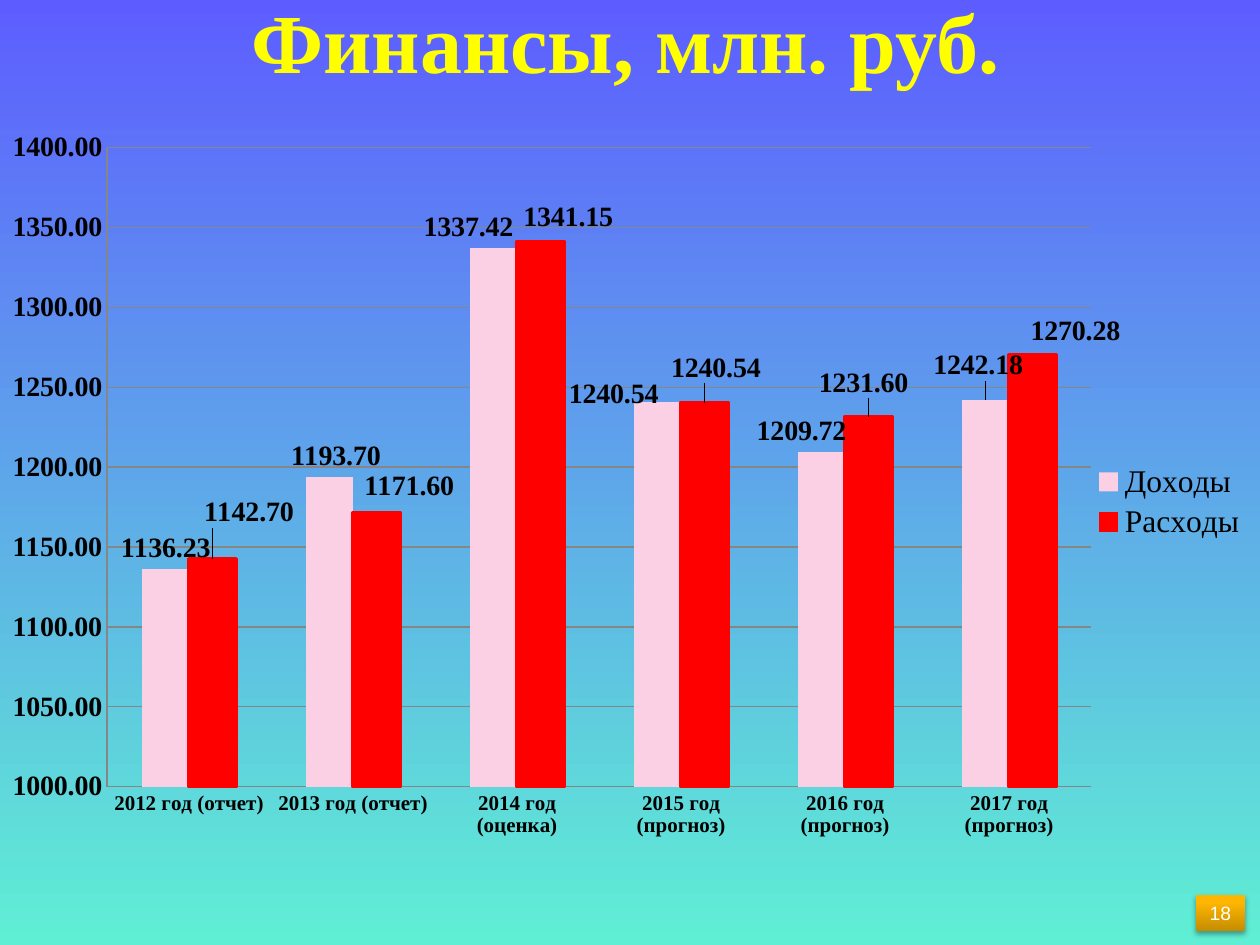
from copy import deepcopy
from lxml import etree
from pptx import Presentation
from pptx.chart.data import CategoryChartData
from pptx.dml.color import RGBColor
from pptx.enum.chart import XL_CHART_TYPE, XL_LABEL_POSITION, XL_LEGEND_POSITION, XL_TICK_MARK
from pptx.enum.shapes import MSO_SHAPE
from pptx.enum.text import MSO_ANCHOR, PP_ALIGN
from pptx.oxml import parse_xml
from pptx.oxml.ns import nsdecls, qn
from pptx.util import Inches, Pt

BLUE = RGBColor(0x5D, 0x5D, 0xFF)
TURQUOISE = RGBColor(0x5F, 0xEF, 0xD4)
YELLOW = RGBColor(0xFF, 0xFF, 0x00)
BLACK = RGBColor(0x00, 0x00, 0x00)
WHITE = RGBColor(0xFF, 0xFF, 0xFF)
GRAY = RGBColor(0x86, 0x86, 0x86)
PINK = RGBColor(0xFB, 0xD0, 0xE4)
RED = RGBColor(0xFF, 0x00, 0x00)
DARK_GOLD = RGBColor(0xC5, 0x8C, 0x00)
GOLD = RGBColor(0xFF, 0xB6, 0x01)
LIGHT_GOLD = RGBColor(0xFF, 0xB6, 0x02)
SERIF = "Times New Roman"
NUMBER_FORMAT = "0.00"


def style_font(font, size, name=SERIF, color=BLACK, bold=False):
    font.size = Pt(size)
    font.name = name
    font.bold = bold
    font.color.rgb = color


def make_layout(**values):
    layout = parse_xml(f"<c:layout {nsdecls('c')}><c:manualLayout/></c:layout>")
    for tag, value in values.items():
        etree.SubElement(layout[0], qn(f"c:{tag}")).set("val", str(value))
    return layout


presentation = Presentation()
presentation.slide_width = Inches(10)
presentation.slide_height = Inches(7.5)
slide = presentation.slides.add_slide(presentation.slide_layouts[6])

background = slide.background.fill
background.gradient()
background.gradient_angle = 270
for stop, color in zip(background.gradient_stops, (BLUE, TURQUOISE)):
    stop.color.rgb = color

title = slide.shapes.add_textbox(Inches(0.16), Inches(0), Inches(9.61), Inches(0.63))
title.text_frame.word_wrap = True
title.text_frame.vertical_anchor = MSO_ANCHOR.MIDDLE
title.text_frame.text = "Финансы, млн. руб."
paragraph = title.text_frame.paragraphs[0]
paragraph.alignment = PP_ALIGN.CENTER
style_font(paragraph.runs[0].font, 48, color=YELLOW, bold=True)

finances = CategoryChartData(number_format=NUMBER_FORMAT)
finances.categories = [
    "2012 год (отчет)", "2013 год (отчет)", "2014 год (оценка)",
    "2015 год (прогноз)", "2016 год (прогноз)", "2017 год (прогноз)",
]
finances.add_series("Доходы", (1136.23, 1193.70, 1337.42, 1240.54, 1209.72, 1242.18))
finances.add_series("Расходы", (1142.70, 1171.60, 1341.15, 1240.54, 1231.60, 1270.28))
chart = slide.shapes.add_chart(
    XL_CHART_TYPE.COLUMN_CLUSTERED, Inches(0), Inches(0.94), Inches(10), Inches(6.09), finances
).chart
style_font(chart.font, 18, name="Arial")
chart.has_title = False
chart.has_legend = True
chart.legend.position = XL_LEGEND_POSITION.RIGHT
chart.legend.include_in_layout = False
style_font(chart.legend.font, 18)

for axis, size in ((chart.category_axis, 12), (chart.value_axis, 16)):
    style_font(axis.tick_labels.font, size, bold=True)
    axis.major_tick_mark = XL_TICK_MARK.NONE
    axis.minor_tick_mark = XL_TICK_MARK.NONE
    axis.format.line.color.rgb = GRAY
value_axis = chart.value_axis
value_axis.minimum_scale = 1000
value_axis.maximum_scale = 1400
value_axis.major_unit = 50
value_axis.has_major_gridlines = True
value_axis.major_gridlines.format.line.color.rgb = GRAY
value_axis.tick_labels.number_format = NUMBER_FORMAT
value_axis.tick_labels.number_format_is_linked = False

plot_area = chart.element.xpath(".//c:plotArea")[0]
for old_layout in plot_area.findall(qn("c:layout")):
    plot_area.remove(old_layout)
plot_area.insert(0, make_layout(
    layoutTarget="inner", xMode="edge", yMode="edge", x=0.085, y=0.038, w=0.781, h=0.833
))

plot = chart.plots[0]
plot.gap_width = 150
plot.overlap = 0
plot.vary_by_categories = False
label_shifts = (
    ((0, 0), (0.005, 0), (-0.02, 0), (-0.035, 0.017), (-0.016, 0), (-0.006, -0.018)),
    ((0.029, -0.033), (0.026, -0.007), (0.022, -0.005), (0.009, -0.018), (-0.004, -0.017), (0.034, -0.004)),
)
for series, color, shifts in zip(plot.series, (PINK, RED), label_shifts):
    series.format.fill.solid()
    series.format.fill.fore_color.rgb = color
    labels = series.data_labels
    labels.show_value = True
    labels.number_format = NUMBER_FORMAT
    labels.number_format_is_linked = False
    labels.position = XL_LABEL_POSITION.OUTSIDE_END
    style_font(labels.font, 16, bold=True)
    for index in range(len(shifts)):
        label = series.points[index].data_label
        style_font(label.font, 16, bold=True)
        label.position = XL_LABEL_POSITION.OUTSIDE_END
plot.series[1].format.line.color.rgb = RED
plot.series[1].format.line.width = Pt(2)

for point_label, (x, y) in zip(chart.element.xpath(".//c:dLbl"), label_shifts[0] + label_shifts[1]):
    number_format = parse_xml(f'<c:numFmt {nsdecls("c")} formatCode="{NUMBER_FORMAT}" sourceLinked="0"/>')
    point_label.insert(1, number_format)
    if x or y:
        point_label.insert(1, make_layout(x=x, y=y))

badge = slide.shapes.add_shape(
    MSO_SHAPE.RECTANGLE, Inches(9.49), Inches(7.1), Inches(0.39), Inches(0.29)
)
badge.line.fill.background()
badge.fill.gradient()
badge.fill.gradient_angle = 90
first_stop = badge.element.xpath(".//a:gs")[0]
middle_stop = deepcopy(first_stop)
middle_stop.set("pos", "80000")
first_stop.addnext(middle_stop)
for stop, color in zip(badge.fill.gradient_stops, (DARK_GOLD, GOLD, LIGHT_GOLD)):
    stop.color.rgb = color
badge.shadow.inherit = False
effects = badge.element.xpath("./p:spPr/a:effectLst")[0]
effects.append(parse_xml(
    f'<a:outerShdw {nsdecls("a")} blurRad="{Pt(3.1)}" dist="{Pt(1.8)}" dir="5400000" rotWithShape="0">'
    '<a:srgbClr val="000000"><a:alpha val="35000"/></a:srgbClr></a:outerShdw>'
))
frame = badge.text_frame
frame.word_wrap = False
frame.vertical_anchor = MSO_ANCHOR.MIDDLE
frame.text = "18"
frame.paragraphs[0].alignment = PP_ALIGN.CENTER
style_font(frame.paragraphs[0].runs[0].font, 11, name="Arial", color=WHITE)

presentation.save("out.pptx")
